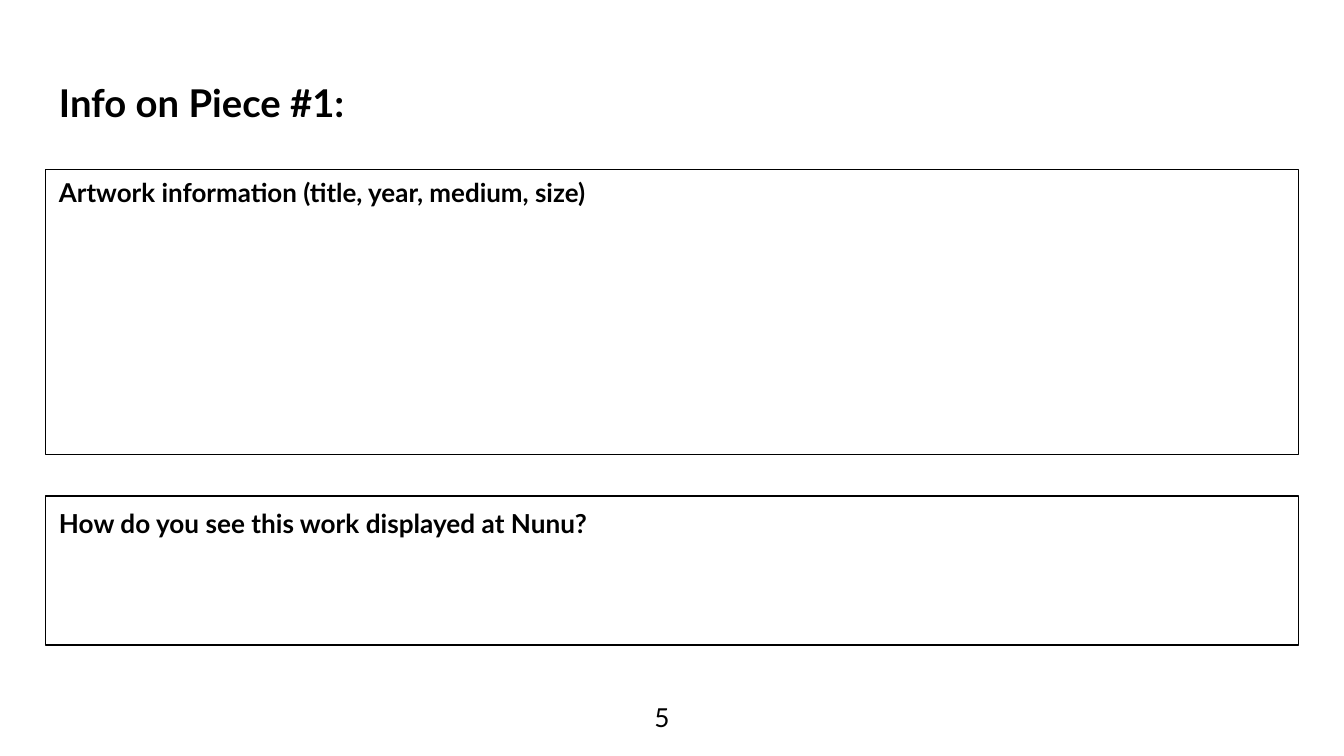
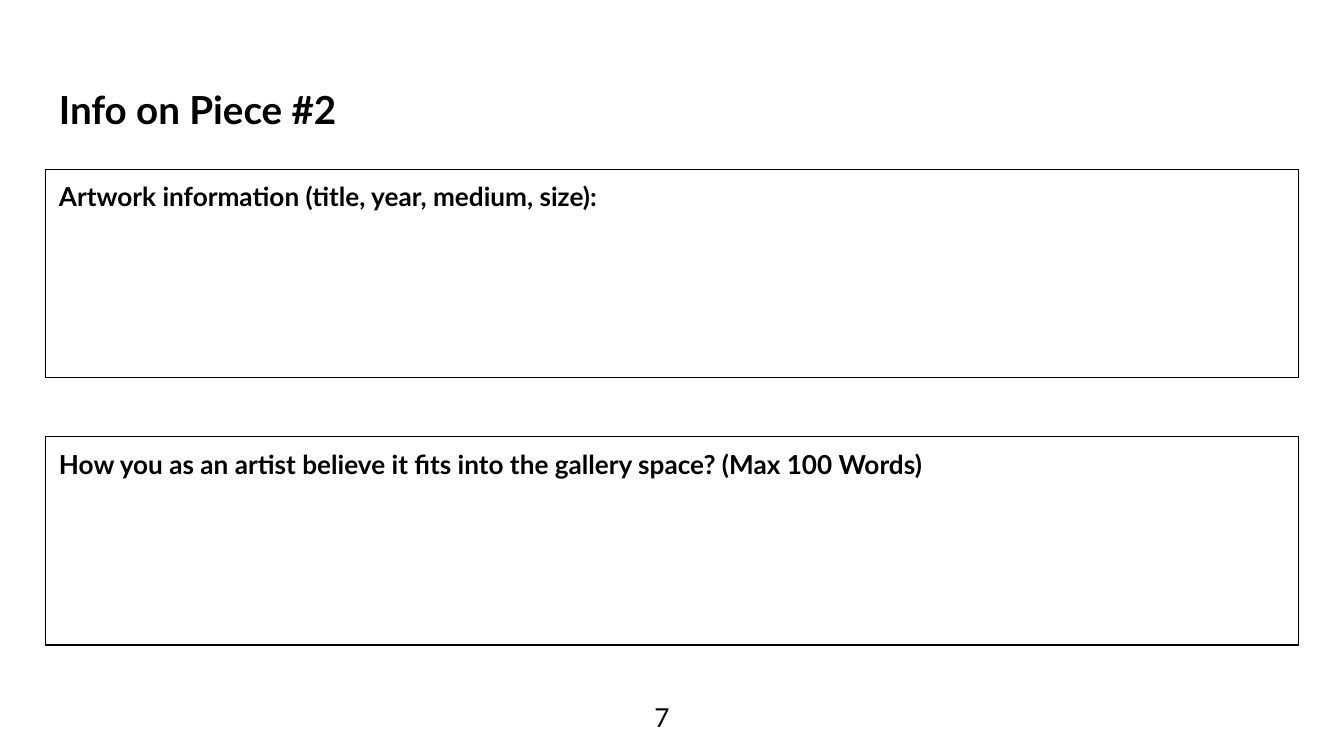
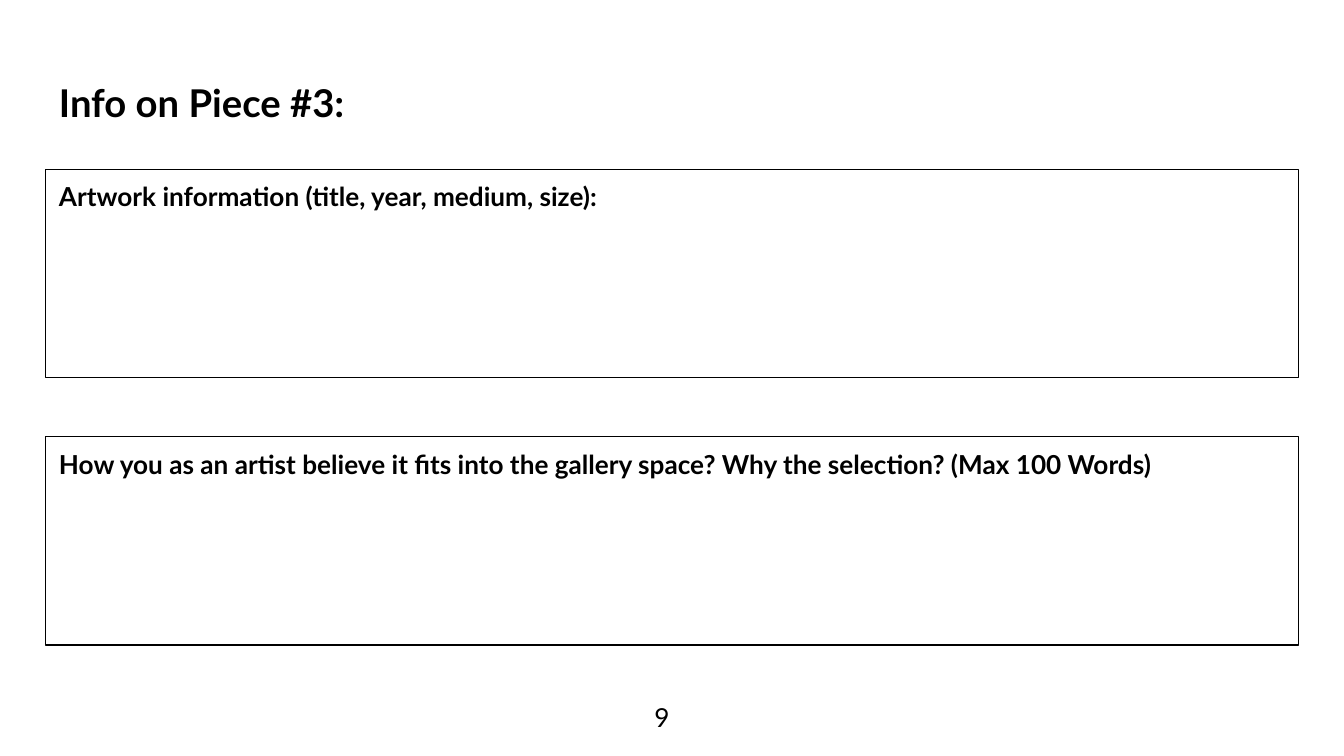
from dataclasses import dataclass

from pptx import Presentation
from pptx.dml.color import RGBColor
from pptx.enum.shapes import MSO_SHAPE
from pptx.enum.text import MSO_ANCHOR, MSO_AUTO_SIZE, PP_ALIGN
from pptx.util import Inches, Pt

# Content: panel entries are (prompt, height in inches, size, line spacing)
PIECES = [
    {
        "title": ("Info on Piece #1:", 20.5, 1.0),
        "panels": [
            ("Artwork information (title, year, medium, size)", 2.12, 13.9, 0.8),
            ("How do you see this work displayed at Nunu?", 1.11, 14, 0.95),
        ],
        "page": "5",
    },
    {
        "title": ("Info on Piece #2", 20.7, 1.15),
        "panels": [
            ("Artwork information (title, year, medium, size):", 1.55, 14, 0.95),
            ("How you as an artist believe it fits into the gallery space? "
             "(Max 100 Words)", 1.55, 14, 0.95),
        ],
        "page": "7",
    },
    {
        "title": ("Info on Piece #3:", 20.5, 1.0),
        "panels": [
            ("Artwork information (title, year, medium, size):", 1.55, 14, 0.95),
            ("How you as an artist believe it fits into the gallery space? "
             "Why the selection? (Max 100 Words)", 1.55, 14, 0.95),
        ],
        "page": "9",
    },
]


@dataclass(frozen=True)
class Theme:
    font: str = "Lato"
    ink: RGBColor = RGBColor(0x00, 0x00, 0x00)
    paper: RGBColor = RGBColor(0xFF, 0xFF, 0xFF)
    page_size: float = 14
    outline: float = 0.75
    inset: float = 0.1


THEME = Theme()

# Layout in inches, on a 16:9 slide
SLIDE_WIDTH = 10
SLIDE_HEIGHT = SLIDE_WIDTH * 9 / 16
MARGIN = 0.34
CONTENT_WIDTH = SLIDE_WIDTH - 2 * MARGIN
TITLE_TOP, TITLE_HEIGHT = 0.49, 0.63
PANELS_TOP, PANELS_BOTTOM = 1.26, 4.8
PAGE_BOX = (2.31, 5.12, 5.23, 0.44)


def write(shape, text, size, bold=True, spacing=1.0, align=PP_ALIGN.LEFT):
    frame = shape.text_frame
    frame.word_wrap = True
    frame.vertical_anchor = MSO_ANCHOR.TOP
    frame.margin_left = frame.margin_right = Inches(THEME.inset)
    frame.margin_top = frame.margin_bottom = Inches(THEME.inset)
    paragraph = frame.paragraphs[0]
    paragraph.alignment = align
    paragraph.line_spacing = spacing
    run = paragraph.add_run()
    run.text = text
    run.font.name = THEME.font
    run.font.size = Pt(size)
    run.font.bold = bold
    run.font.color.rgb = THEME.ink


def add_text(slide, box, text, size, **style):
    shape = slide.shapes.add_textbox(*map(Inches, box))
    write(shape, text, size, **style)
    return shape


def add_panel(slide, box, prompt, size, spacing):
    shape = slide.shapes.add_shape(MSO_SHAPE.RECTANGLE, *map(Inches, box))
    shape.shadow.inherit = False
    shape.fill.background()
    shape.line.color.rgb = THEME.ink
    shape.line.width = Pt(THEME.outline)
    write(shape, prompt, size, spacing=spacing)


def add_piece(presentation, piece):
    slide = presentation.slides.add_slide(presentation.slide_layouts[6])
    slide.background.fill.solid()
    slide.background.fill.fore_color.rgb = THEME.paper

    # Title
    text, size, spacing = piece["title"]
    add_text(slide, (MARGIN, TITLE_TOP, CONTENT_WIDTH, TITLE_HEIGHT),
             text, size, spacing=spacing)

    # Answer panels, with the spare height shared out as gaps
    panels = piece["panels"]
    used = sum(height for _, height, _, _ in panels)
    gap = (PANELS_BOTTOM - PANELS_TOP - used) / (len(panels) - 1)
    top = PANELS_TOP
    for prompt, height, size, spacing in panels:
        add_panel(slide, (MARGIN, top, CONTENT_WIDTH, height),
                  prompt, size, spacing)
        top += height + gap

    # Page number
    page = add_text(slide, PAGE_BOX, piece["page"], THEME.page_size,
                    bold=False, align=PP_ALIGN.CENTER)
    page.text_frame.auto_size = MSO_AUTO_SIZE.SHAPE_TO_FIT_TEXT


def main():
    presentation = Presentation()
    presentation.slide_width = Inches(SLIDE_WIDTH)
    presentation.slide_height = Inches(SLIDE_HEIGHT)
    for piece in PIECES:
        add_piece(presentation, piece)
    presentation.save("out.pptx")


if __name__ == "__main__":
    main()
